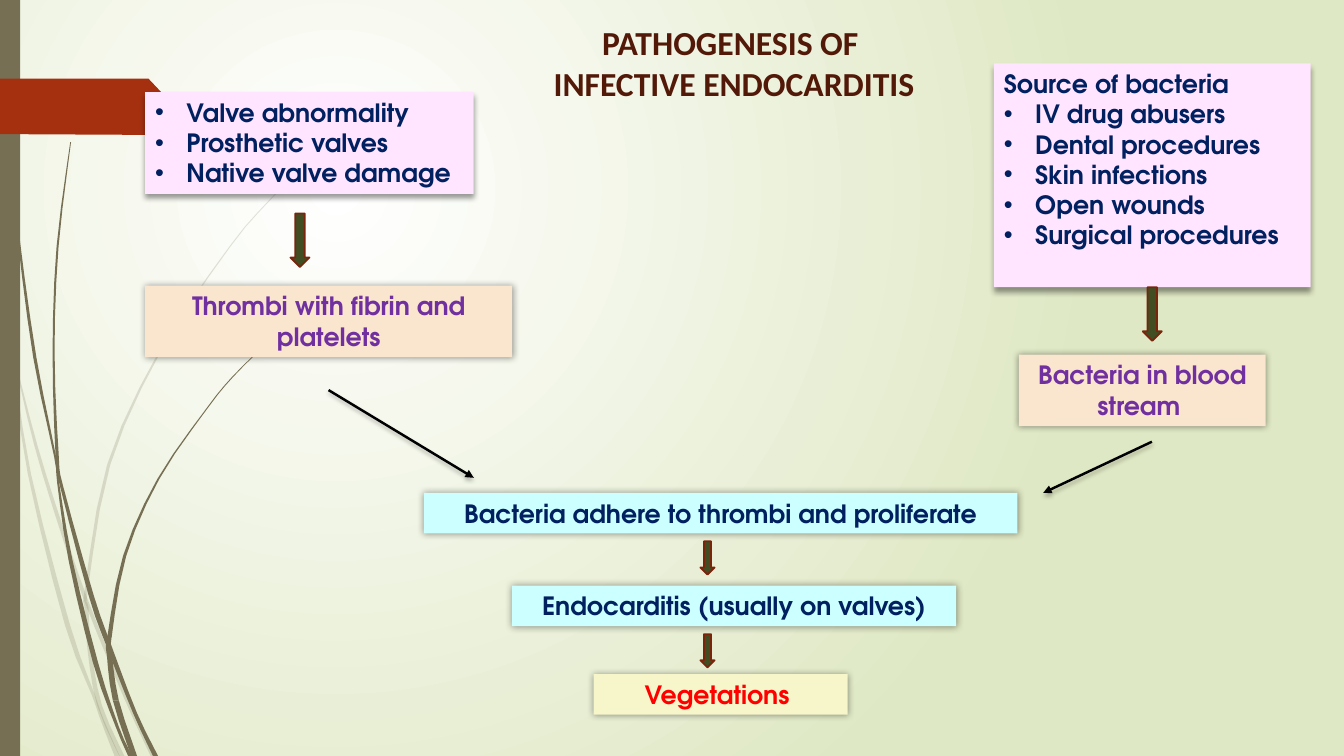
from lxml.etree import SubElement
from pptx import Presentation
from pptx.dml.color import RGBColor
from pptx.enum.shapes import MSO_CONNECTOR, MSO_SHAPE
from pptx.enum.text import MSO_ANCHOR, PP_ALIGN
from pptx.oxml.ns import qn
from pptx.util import Cm, Pt

COLOURS = {
    "centre": "FFFFFF", "edge": "DFE8C4", "grass": "766F54", "flag": "A53010",
    "pink": "FFE5FF", "peach": "FAE5CF", "aqua": "CCFFFF", "cream": "F7F6CA",
    "navy": "002060", "purple": "7030A0", "red": "FF0000", "title": "521808",
    "arrow": "424D22", "arrow_edge": "7A240C", "black": "000000",
}
FONT = "TeX Gyre Adventor"
LIFTED = {"alpha": 40, "blur": 4, "distance": 3, "angle": 90}
GLOW = {"alpha": 40, "blur": 5, "distance": 0, "angle": 0}
LINE_SHADOW = {"alpha": 25, "blur": 3, "distance": 2, "angle": 90}
CURVE_STEPS = 3

PALE_BLADES = [
    ([1, 5], [(0, 7.37, .05), (.28, 8.89, .05), (.74, 11.94, .08), (1.7, 15.75, .13),
              (2.36, 17.53, .08), (2.57, 18.13, .08), (2.95, 19.05, .13)]),
    ([3], [(.43, 9.32, .03), (.91, 11.25, .08), (1.52, 13.23, .1), (2.18, 15.16, .1),
           (3.18, 17.6, .1), (3.86, 19.05, .13)]),
    ([5, 6, 8], [(7.92, 3.89, .02), (6.81, 5.03, .03), (5.79, 6.22, .03),
                 (4.04, 8.84, .05), (2.74, 11.71, .08), (2.18, 14.83, .08),
                 (2.18, 15.3, .1), (2.26, 16.41, .1), (2.51, 17.78, .12),
                 (3.07, 19.05, .13)]),
]
DARK_BLADES = [
    ([5, 8], [(.1, 0, .03), (.15, 2.77, .03), (.46, 5.92, .05), (.88, 9.02, .08),
              (1.39, 11.51, .05), (1.47, 12.2, .05), (1.78, 14.13, .1),
              (2.41, 16.71, .13), (2.95, 18.3, .08), (3.28, 19.05, .1)]),
    ([3, 4, 6], [(1.78, 3.58, .02), (1.45, 6.22, .05), (1.35, 8.86, .05),
                 (1.44, 11.46, .08), (1.57, 12.32, .08), (2.3, 15.01, .13),
                 (2.74, 16.26, .13), (3.4, 17.96, .1), (3.92, 19.05, .13)]),
    ([5, 6, 7], [(6.63, 8.74, .02), (5.87, 9.49, .03), (5.21, 10.3, .03),
                 (3.99, 12.07, .05), (3.14, 14.01, .08), (2.76, 16.05, .11),
                 (2.76, 16.51, .13), (2.92, 17.65, .15), (3.38, 19.05, .15)]),
]


def colour(name):
    return RGBColor.from_string(COLOURS[name])


def paint(shape, fill, alpha=None):
    shape.fill.solid()
    shape.fill.fore_color.rgb = colour(fill)
    shape.line.fill.background()
    shape.shadow.inherit = False
    if alpha:
        tint = shape.element.spPr.find(qn("a:solidFill"))[0]
        SubElement(tint, qn("a:alpha"), val=str(alpha * 1000))


def add_shadow(effects, alpha, blur, distance, angle):
    shadow = SubElement(effects, qn("a:outerShdw"), blurRad=str(Pt(blur)),
                        dist=str(Pt(distance)), dir=str(angle * 60000),
                        algn="ctr", rotWithShape="0")
    tint = SubElement(shadow, qn("a:srgbClr"), val=COLOURS["black"])
    SubElement(tint, qn("a:alpha"), val=str(alpha * 1000))


def set_background(page):
    fill = page.background.fill
    fill.gradient()
    for stop, name in zip(fill.gradient_stops, ("centre", "edge")):
        stop.color.rgb = colour(name)
    gradient = page.element.find(".//" + qn("a:gradFill"))
    gradient.remove(gradient.find(qn("a:lin")))
    circle = SubElement(gradient, qn("a:path"), {"path": "circle"})
    SubElement(circle, qn("a:fillToRect"), l="50000", t="50000", r="100000", b="100000")


def add_outline(page, points, fill, alpha=None):
    corners = [(Cm(x), Cm(y)) for x, y in points]
    builder = page.shapes.build_freeform(*corners[0])
    builder.add_line_segments(corners[1:], close=True)
    paint(builder.convert_to_shape(), fill, alpha)


def smooth_curve(points):
    padded = [points[0], *points, points[-1]]
    for before, start, end, after in zip(padded, padded[1:], padded[2:], padded[3:]):
        for step in range(CURVE_STEPS):
            t = step / CURVE_STEPS
            yield tuple(
                b + t * (c - a + t * (2 * a - 5 * b + 4 * c - d + t * (3 * b - a - 3 * c + d))) / 2
                for a, b, c, d in zip(before, start, end, after))
    yield points[-1]


def add_blade(page, joints, points, alpha=None):
    curve = list(smooth_curve(points))
    bounds = [0, *joints, len(points) - 1]
    for first, last in zip(bounds, bounds[1:]):
        piece = curve[first * CURVE_STEPS:last * CURVE_STEPS + 1]
        left = [(x - width / 2, y) for x, y, width in piece]
        right = [(x + width / 2, y) for x, y, width in piece]
        add_outline(page, left + right[::-1], "grass", alpha)


def add_bullet(para):
    properties = para._p.get_or_add_pPr()
    properties.set("marL", str(Cm(.79)))
    properties.set("indent", str(-Cm(.79)))
    SubElement(properties, qn("a:buFont"), typeface="Arial")
    SubElement(properties, qn("a:buChar"), char="•")


def write_lines(box, lines, ink, size=18, font=FONT, align=PP_ALIGN.CENTER):
    frame = box.text_frame
    frame.word_wrap = True
    frame.vertical_anchor = MSO_ANCHOR.TOP
    for index, line in enumerate(lines):
        para = frame.paragraphs[0] if index == 0 else frame.add_paragraph()
        para.text = line
        para.alignment = align
        para.font.name = font
        para.font.size = Pt(size)
        para.font.bold = True
        para.font.color.rgb = colour(ink)


def add_box(page, place, fill, shadow):
    box = page.shapes.add_shape(MSO_SHAPE.RECTANGLE, *map(Cm, place))
    paint(box, fill)
    add_shadow(box.element.spPr.find(qn("a:effectLst")), **shadow)
    return box


def add_list_box(page, place, items, heading=None):
    box = add_box(page, place, "pink", LIFTED)
    lines = [heading, *items] if heading else items
    write_lines(box, lines, "navy", align=PP_ALIGN.LEFT)
    for para in box.text_frame.paragraphs[len(lines) - len(items):]:
        add_bullet(para)


def add_step(page, place, text, fill, ink):
    write_lines(add_box(page, place, fill, GLOW), [text], ink)


def add_down_arrow(page, *place):
    arrow = page.shapes.add_shape(MSO_SHAPE.DOWN_ARROW, *map(Cm, place))
    paint(arrow, "arrow")
    arrow.line.color.rgb = colour("arrow_edge")
    arrow.line.width = Pt(1.25)


def add_link(page, *ends):
    link = page.shapes.add_connector(MSO_CONNECTOR.STRAIGHT, *map(Cm, ends))
    link.line.color.rgb = colour("black")
    link.line.width = Pt(1.75)
    properties = link.element.spPr
    SubElement(properties.find(qn("a:ln")), qn("a:tailEnd"), type="triangle")
    add_shadow(SubElement(properties, qn("a:effectLst")), **LINE_SHADOW)


def add_decoration(page):
    for joints, points in PALE_BLADES:
        add_blade(page, joints, points, 20)
    for joints, points in DARK_BLADES:
        add_blade(page, joints, points)
    bar = page.shapes.add_shape(MSO_SHAPE.RECTANGLE, 0, 0, Cm(.51), Cm(19.05))
    paint(bar, "grass")
    add_outline(page, [(0, 1.98), (3.74, 1.98), (4.41, 2.69), (3.74, 3.4), (0, 3.38)], "flag")


def main():
    deck = Presentation()
    deck.slide_width, deck.slide_height = Cm(33.87), Cm(19.05)
    page = deck.slides.add_slide(deck.slide_layouts[6])
    set_background(page)
    add_decoration(page)

    add_list_box(page, (3.66, 2.32, 8.28, 2.57),
                 ["Valve abnormality", "Prosthetic valves", "Native valve damage"])
    add_list_box(page, (25.05, 1.6, 7.98, 5.64),
                 ["IV drug abusers", "Dental procedures", "Skin infections",
                  "Open wounds", "Surgical procedures"], "Source of bacteria")
    for place, text, fill, ink in [
        ((25.68, 8.94, 6.22, 1.8), "Bacteria in blood stream ", "peach", "purple"),
        ((3.66, 7.2, 9.25, 1.8), "Thrombi with fibrin and platelets", "peach", "purple"),
        ((10.68, 12.42, 14.96, 1.02), "Bacteria adhere to thrombi and proliferate", "aqua", "navy"),
        ((12.9, 14.76, 11.2, 1.02), "Endocarditis (usually on valves)", "aqua", "navy"),
        ((14.96, 16.99, 6.4, 1.02), "Vegetations ", "cream", "red"),
    ]:
        add_step(page, place, text, fill, ink)

    title = page.shapes.add_textbox(Cm(12.9), Cm(.44), Cm(11.2), Cm(2.31))
    write_lines(title, ["PATHOGENESIS OF ", "INFECTIVE ENDOCARDITIS"], "title", 24, "Calibri")

    for left, top in [(7.32, 5.38), (28.8, 7.24)]:
        add_down_arrow(page, left, top, .48, 1.35)
    add_link(page, 8.28, 9.83, 11.94, 12.04)
    add_link(page, 29.03, 11.13, 26.29, 12.42)
    for top in (13.64, 15.98):
        add_down_arrow(page, 17.65, top, .36, .84)
    deck.save("out.pptx")


if __name__ == "__main__":
    main()
